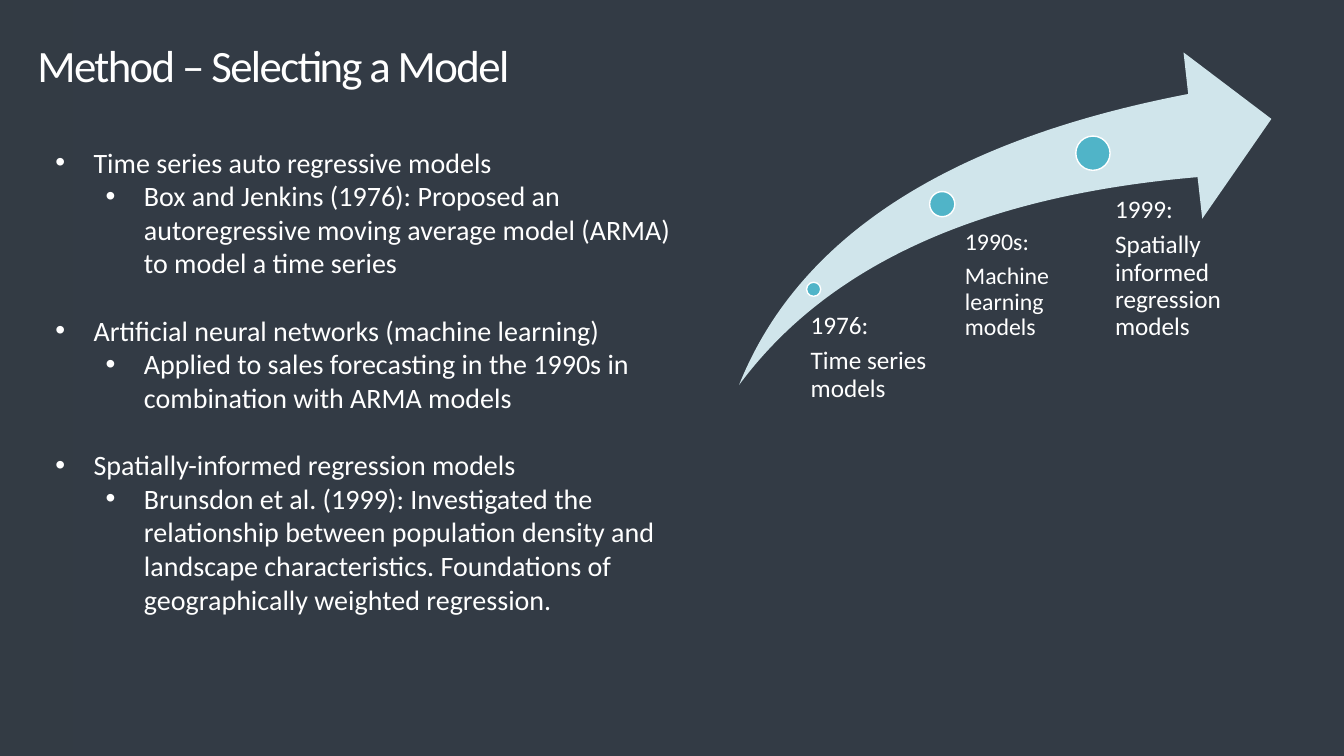
from pptx import Presentation
from pptx.dml.color import RGBColor
from pptx.enum.shapes import MSO_SHAPE
from pptx.enum.text import MSO_ANCHOR, MSO_AUTO_SIZE, PP_ALIGN
from pptx.util import Inches, Pt
from lxml.etree import SubElement
from pptx.oxml.ns import qn


def color(code):
    return RGBColor.from_string(code)


def write(para, text, size=20, tint="FFFFFF", font="Calibri", track=None,
          lead=None, before=0, after=0):
    run = para.add_run()
    run.text = text
    run.font.size = Pt(size)
    run.font.name = font
    run.font.color.rgb = color(tint)
    if track:
        run.font._element.set("spc", str(round(track * 100)))
    para.alignment = PP_ALIGN.LEFT
    para.line_spacing = lead
    para.space_before = Pt(before)
    para.space_after = Pt(after)


class Deck:
    panel = "333B45"
    edge = "333B44"
    pale = "D0E5EB"
    teal = "50B4C8"
    white = "FFFFFF"

    def __init__(self):
        self.show = Presentation()
        self.show.slide_width = Inches(13.33)
        self.show.slide_height = Inches(7.5)
        self.slide = self.show.slides.add_slide(self.show.slide_layouts[5])
        fill = self.slide.background.fill
        fill.solid()
        fill.fore_color.rgb = color(self.edge)

    def shape(self, kind, box, fill, line=None):
        item = self.slide.shapes.add_shape(kind, *map(Inches, box))
        item.shadow.inherit = False
        item.fill.solid()
        item.fill.fore_color.rgb = color(fill)
        if line:
            item.line.color.rgb = color(line)
            item.line.width = Pt(1)
        else:
            item.line.fill.background()
        return item

    def title(self, text, box):
        item = self.slide.shapes.title
        item.left, item.top, item.width, item.height = map(Inches, box)
        frame = item.text_frame
        frame.auto_size = MSO_AUTO_SIZE.NONE
        frame.vertical_anchor = MSO_ANCHOR.MIDDLE
        write(frame.paragraphs[0], text, size=32, track=-1.2, lead=0.8)

    def text(self, box, inset):
        frame = self.slide.shapes.add_textbox(*map(Inches, box)).text_frame
        frame.word_wrap = True
        (frame.margin_left, frame.margin_top,
         frame.margin_right, frame.margin_bottom) = map(Inches, inset)
        return frame

    def bullet(self, para, text, level, before=0):
        para.level = level
        write(para, text, before=before)
        props = para._p.get_or_add_pPr()
        props.set("marL", str(Inches(0.38 + level * 0.5)))
        props.set("indent", str(Inches(-0.38)))
        SubElement(props, qn("a:buFont")).set("typeface", "Arial")
        SubElement(props, qn("a:buChar")).set("char", "•")

    def outline(self, topics, box):
        frame = self.text(box, (0.1, 0.39, 0.1, 0.05))
        for place, (head, detail) in enumerate(topics):
            para = frame.add_paragraph() if place else frame.paragraphs[0]
            self.bullet(para, head, 0, before=24 if place else 0)
            self.bullet(frame.add_paragraph(), detail, 1)

    def stage(self, year, name, dot, box, inset, size):
        left, top, width = dot
        self.shape(MSO_SHAPE.OVAL, (left, top, width, width), self.teal, self.white)
        frame = self.text(box, (inset, 0, 0, 0))
        write(frame.paragraphs[0], year, size=size, lead=0.9, after=6)
        write(frame.add_paragraph(), name, size=size, lead=0.9, after=6)


TOPICS = [
    ("Time series auto regressive models",
     "Box and Jenkins (1976): Proposed an autoregressive moving average model "
     "(ARMA) to model a time series"),
    ("Artificial neural networks (machine learning)",
     "Applied to sales forecasting in the 1990s in combination with ARMA models"),
    ("Spatially-informed regression models",
     "Brunsdon et al. (1999): Investigated the relationship between population "
     "density and landscape characteristics. Foundations of geographically "
     "weighted regression."),
]

STAGES = [
    ("1976:", "Time series models",
     (8, 2.8, 0.14), (7.97, 3.1, 1.58, 0.95), 0.07, 18),
    ("1990s:", "Machine learning models",
     (9.22, 1.9, 0.25), (9.44, 2.28, 1.31, 1.8), 0.13, 17),
    ("1999:", "Spatially informed regression models",
     (10.67, 1.35, 0.34), (10.88, 1.95, 1.27, 2.29), 0.18, 18),
]


def main():
    deck = Deck()
    deck.shape(MSO_SHAPE.RECTANGLE, (0.72, 0, 12.61, 7.5), deck.panel)
    deck.outline(TOPICS, (0.45, 1.05, 6.44, 6.16))
    arrow = deck.shape(MSO_SHAPE.SWOOSH_ARROW, (7.33, 0.52, 5.28, 3.3), deck.pale)
    arrow.adjustments[0] = 0.25
    arrow.adjustments[1] = 0.25
    for stage in STAGES:
        deck.stage(*stage)
    deck.title("Method – Selecting a Model", (0.27, 0.23, 7.15, 0.92))
    tree = deck.slide.shapes._spTree
    tree.append(deck.slide.shapes.title._element)
    deck.show.save("out.pptx")


if __name__ == "__main__":
    main()
